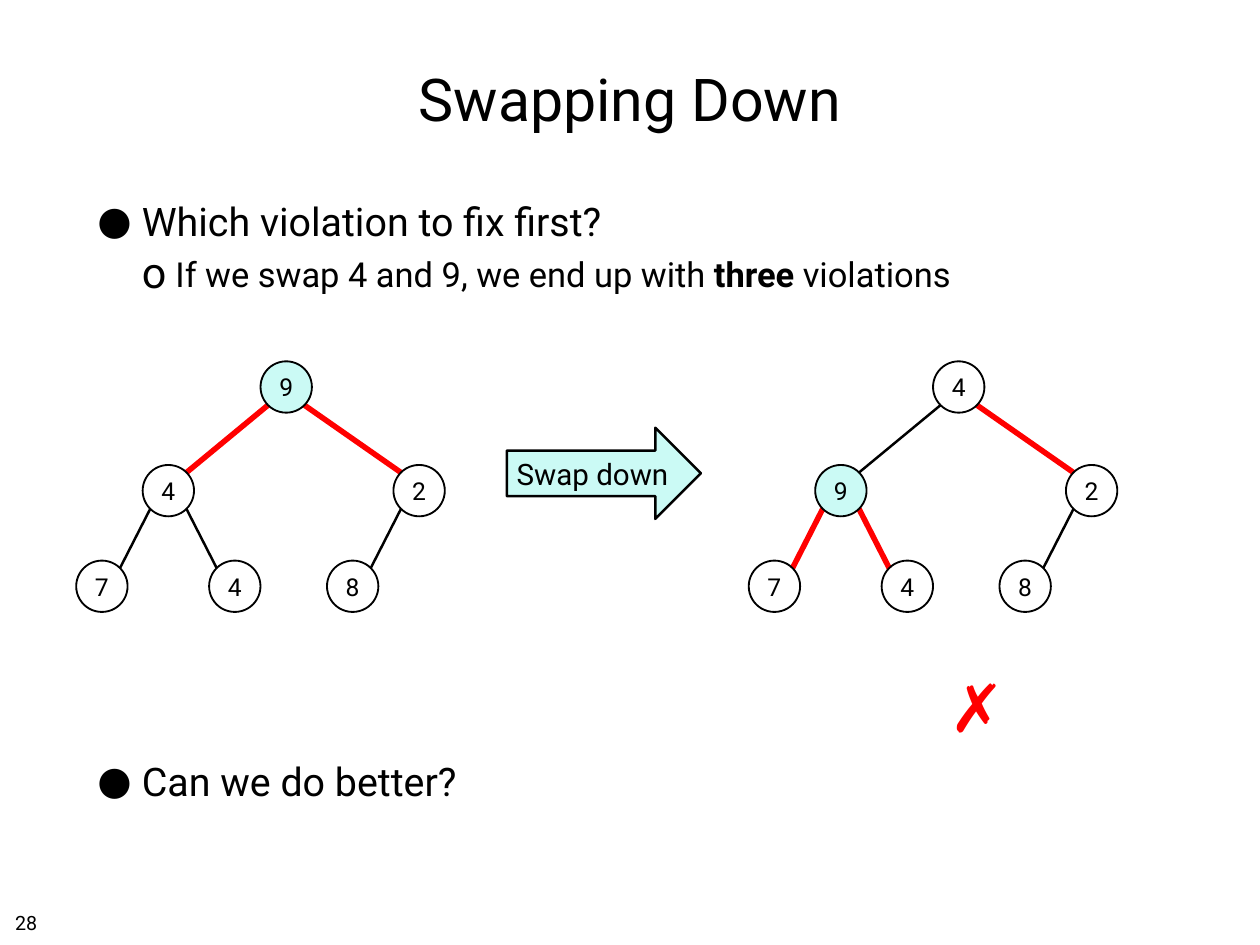
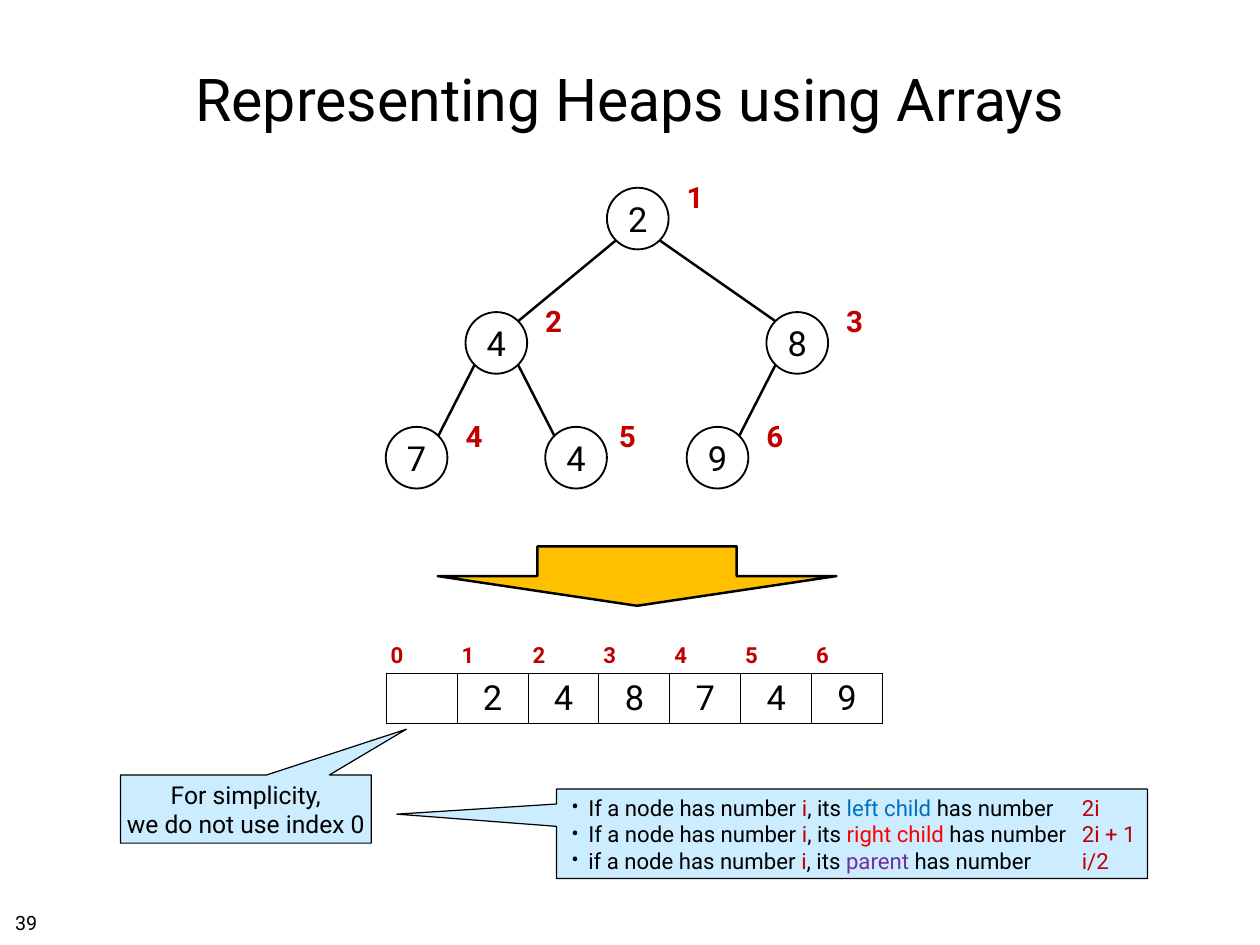
from lxml.etree import SubElement
from pptx import Presentation
from pptx.dml.color import RGBColor
from pptx.enum.shapes import MSO_CONNECTOR, MSO_SHAPE
from pptx.enum.text import MSO_ANCHOR, MSO_AUTO_SIZE, PP_ALIGN
from pptx.oxml.ns import qn
from pptx.util import Inches, Pt

FONT = "Roboto"
COLORS = {
    "black": "000000",
    "red": "FF0000",
    "index": "C00000",
    "mint": "CBFAF5",
    "gold": "FFC000",
    "sky": "CCECFF",
    "blue": "0070C0",
    "purple": "7030A0",
}
TREE_OFFSETS = [(0, 0), (-1.33, 1.17), (1.5, 1.17), (-2.08, 2.25), (-0.58, 2.25), (0.75, 2.25)]
NODE_SIZE = 0.58
DIAGONAL = 0.35


def color(name):
    return RGBColor.from_string(COLORS[name])


class SlideBuilder:
    def __init__(self):
        self.deck = Presentation()
        self.deck.slide_width = Inches(14.22)
        self.deck.slide_height = Inches(10.67)
        self.slide = None

    def add_slide(self, layout, title, number):
        self.slide = self.deck.slides.add_slide(self.deck.slide_layouts[layout])
        box = self.slide.shapes.title
        self.place(box, 1.04, 0.28, 12.14, 1.64)
        self.frame(box, 0.06, MSO_ANCHOR.MIDDLE)
        self.paragraph(box.text_frame.paragraphs[0], title, 48, align=PP_ALIGN.CENTER)
        self.text(number, 0.11, 10.23, 0.37, 0.35, 16, inset=0.06, align=PP_ALIGN.LEFT)

    def place(self, shape, left, top, width, height):
        shape.left, shape.top = Inches(left), Inches(top)
        shape.width, shape.height = Inches(width), Inches(height)

    def frame(self, box, inset, anchor, wrap=True):
        frame = box.text_frame
        frame.auto_size = MSO_AUTO_SIZE.NONE
        frame.word_wrap = wrap
        frame.vertical_anchor = anchor
        frame.margin_left = frame.margin_right = Inches(inset)
        frame.margin_top = frame.margin_bottom = Inches(inset)
        return frame

    def paragraph(self, para, content, size, tint="black", bold=None, align=PP_ALIGN.LEFT):
        para.alignment = align
        para.font.name = FONT
        para.font.size = Pt(size)
        para.font.bold = bold
        para.font.color.rgb = color(tint)
        spans = [(content, {})] if isinstance(content, str) else content
        for words, style in spans:
            span = para.add_run()
            span.text = words
            if "tint" in style:
                span.font.color.rgb = color(style["tint"])
            if "bold" in style:
                span.font.bold = style["bold"]

    def bullet(self, para, symbol, left, hanging, percent=100, tab=None):
        properties = para._p.get_or_add_pPr()
        properties.set("marL", str(Inches(left)))
        properties.set("indent", str(-Inches(hanging)))
        tone = SubElement(properties, qn("a:buClr"))
        SubElement(tone, qn("a:srgbClr"), val=COLORS["black"])
        SubElement(properties, qn("a:buSzPct"), val=str(percent * 1000))
        SubElement(properties, qn("a:buFont"), typeface=FONT)
        SubElement(properties, qn("a:buChar"), char=symbol)
        if tab:
            tabs = SubElement(properties, qn("a:tabLst"))
            SubElement(tabs, qn("a:tab"), pos=str(Inches(tab)), algn="l")

    def body(self, items):
        box = self.slide.placeholders[1]
        self.place(box, 1.04, 2.17, 12.14, 7.54)
        frame = self.frame(box, 0.06, MSO_ANCHOR.TOP)
        for position, (level, content, before) in enumerate(items):
            para = frame.add_paragraph() if position else frame.paragraphs[0]
            para.level = level
            para.space_before = Pt(before)
            if level:
                self.bullet(para, "o", 0.88, 0.38, 125)
            else:
                self.bullet(para, "●", 0.5, 0.5)
            self.paragraph(para, content, 28 if level else 32)

    def text(self, content, left, top, width, height, size, tint="black", bold=None,
             inset=0.1, align=PP_ALIGN.CENTER):
        box = self.slide.shapes.add_textbox(
            Inches(left), Inches(top), Inches(width), Inches(height))
        self.frame(box, inset, MSO_ANCHOR.TOP, wrap=False)
        self.paragraph(box.text_frame.paragraphs[0], content, size, tint, bold, align)

    def shape(self, kind, left, top, width, height, fill=None, weight=2.0, lines=(),
              size=20, inset=0.05, wrap=False):
        shape = self.slide.shapes.add_shape(
            kind, Inches(left), Inches(top), Inches(width), Inches(height))
        shape.shadow.inherit = False
        if fill:
            shape.fill.solid()
            shape.fill.fore_color.rgb = color(fill)
        else:
            shape.fill.background()
        shape.line.color.rgb = color("black")
        shape.line.width = Pt(weight)
        frame = self.frame(shape, inset, MSO_ANCHOR.MIDDLE, wrap)
        for position, words in enumerate(lines):
            para = frame.add_paragraph() if position else frame.paragraphs[0]
            self.paragraph(para, words, size, align=PP_ALIGN.CENTER)
        return shape

    def line(self, start, end, tint="black", weight=2.0):
        points = [Inches(value) for value in (*start, *end)]
        connector = self.slide.shapes.add_connector(MSO_CONNECTOR.STRAIGHT, *points)
        connector.line.color.rgb = color(tint)
        connector.line.width = Pt(weight)
        SubElement(connector._element.spPr, qn("a:effectLst"))

    def tree(self, values, left, top, size, scale=1.0, red_edges=(), marked=None):
        diameter = NODE_SIZE * scale
        corners = [(left + x * scale, top + y * scale) for x, y in TREE_OFFSETS]
        centers = [(x + diameter / 2, y + diameter / 2) for x, y in corners]
        reach = diameter * DIAGONAL
        for child in range(1, len(values)):
            parent_x, parent_y = centers[(child - 1) // 2]
            child_x, child_y = centers[child]
            shift = -reach if child % 2 else reach
            is_red = child in red_edges
            self.line((parent_x + shift, parent_y + reach), (child_x - shift, child_y - reach),
                      "red" if is_red else "black", 4.5 if is_red else 2)
        for index, (value, (x, y)) in enumerate(zip(values, corners)):
            self.shape(MSO_SHAPE.OVAL, x, y, diameter, diameter,
                       "mint" if index == marked else None, 1.5, [value], size, 0.06)
        return corners

    def callout(self, left, top, width, height, tip, lines=(), wrap=False):
        box = self.shape(MSO_SHAPE.RECTANGULAR_CALLOUT, left, top, width, height,
                         "sky", 1, lines, wrap=wrap)
        box.adjustments[0], box.adjustments[1] = tip
        return box

    def border(self, cell, sides):
        properties = cell._tc.get_or_add_tcPr()
        for side in "LRTB":
            edge = SubElement(properties, qn(f"a:ln{side}"), w=str(Pt(1)))
            if side in sides:
                fill = SubElement(edge, qn("a:solidFill"))
                SubElement(fill, qn("a:srgbClr"), val=COLORS["black"])
            else:
                SubElement(edge, qn("a:noFill"))

    def array(self, values, left, top, cell_width):
        table = self.slide.shapes.add_table(
            2, len(values), Inches(left), Inches(top),
            Inches(cell_width * len(values)), Inches(0.97)).table
        table.first_row = table.horz_banding = False
        table.rows[0].height, table.rows[1].height = Inches(0.4), Inches(0.57)
        for column, value in enumerate(values):
            table.columns[column].width = Inches(cell_width)
            index_cell, value_cell = table.cell(0, column), table.cell(1, column)
            self.border(index_cell, "B")
            self.border(value_cell, "LRTB")
            for cell in (index_cell, value_cell):
                cell.fill.background()
                cell.margin_top = cell.margin_bottom = Inches(0.05)
            index_cell.margin_left = Inches(0.05)
            index_cell.vertical_anchor = MSO_ANCHOR.BOTTOM
            value_cell.vertical_anchor = MSO_ANCHOR.MIDDLE
            self.paragraph(index_cell.text_frame.paragraphs[0], str(column), 18, "index", True)
            if value:
                self.paragraph(value_cell.text_frame.paragraphs[0], value, 28,
                               align=PP_ALIGN.CENTER)


def swapping_down(builder):
    builder.add_slide(1, "Swapping Down", "28")
    builder.body([
        (0, "Which violation to fix first?", 8),
        (1, [("If we swap 4 and 9, we end up with ", {}), ("three", {"bold": True}),
             (" violations", {})], 7),
        (0, "Can we do better?", 376),
    ])
    builder.tree("942748", 2.94, 4.08, 20, red_edges=(1, 2), marked=0)
    builder.tree("492748", 10.53, 4.08, 20, red_edges=(2, 3, 4), marked=1)
    builder.text("✗", 10.69, 7.42, 0.69, 1.01, 54, "red", True)
    builder.shape(MSO_SHAPE.RIGHT_ARROW, 5.72, 4.83, 2.19, 1.03, "mint", 2,
                  ["Swap down"], 24, 0.06)


def heaps_as_arrays(builder):
    builder.add_slide(5, "Representing Heaps using Arrays", "39")
    heap = "248749"
    corners = builder.tree(heap, 6.85, 2.12, 28, scale=1.2)
    label_gaps = [0.8, 0.8, 0.8, 0.8, 0.73, 0.8]
    for number, ((x, y), gap) in enumerate(zip(corners, label_gaps), 1):
        builder.text(str(number), x + gap, y - 0.2, 0.39, 0.5, 24, "index", True)
    builder.array(["", *heap], 4.36, 7.2, 0.8)
    builder.shape(MSO_SHAPE.DOWN_ARROW, 4.94, 6.17, 4.5, 0.67, "gold")
    builder.callout(1.36, 8.75, 2.83, 0.77, (0.64, -1.17),
                    ["For simplicity,", "we do not use index 0"])
    rules = builder.callout(6.28, 8.91, 6.67, 1.01, (-0.77, -0.22), wrap=True)
    relations = [
        ("If", "left child", "blue", "2i"),
        ("If", "right child", "red", "2i + 1"),
        ("if", "parent", "purple", "i/2"),
    ]
    frame = rules.text_frame
    for position, (opening, relative, tint, formula) in enumerate(relations):
        para = frame.add_paragraph() if position else frame.paragraphs[0]
        builder.bullet(para, "•", 0.31, 0.19, tab=5.88)
        builder.paragraph(para, [
            (f"{opening} a node has number ", {}),
            ("i", {"tint": "index"}),
            (", its ", {}),
            (relative, {"tint": tint}),
            (" has number\t", {}),
            (formula, {"tint": "index"}),
        ], 18)


def main():
    builder = SlideBuilder()
    swapping_down(builder)
    heaps_as_arrays(builder)
    builder.deck.save("out.pptx")


if __name__ == "__main__":
    main()
